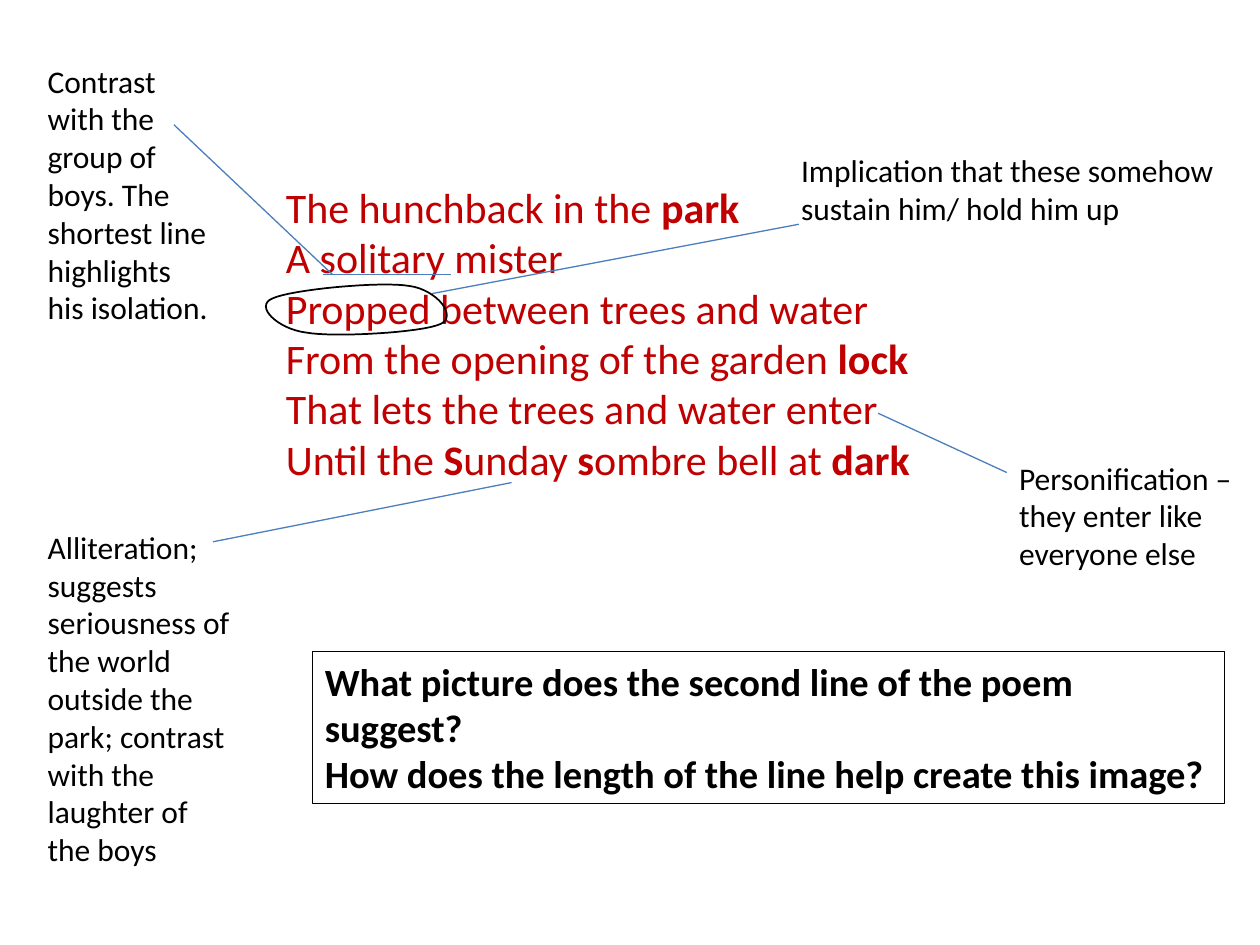
from dataclasses import dataclass

from lxml import etree
from pptx import Presentation
from pptx.dml.color import RGBColor
from pptx.enum.shapes import MSO_CONNECTOR
from pptx.enum.text import MSO_ANCHOR, MSO_AUTO_SIZE
from pptx.oxml.ns import qn
from pptx.util import Inches, Pt

STRAIGHT = MSO_CONNECTOR.STRAIGHT
TOP = MSO_ANCHOR.TOP
GROW = MSO_AUTO_SIZE.SHAPE_TO_FIT_TEXT
BLANK_LAYOUT = 6
CURVE_STEPS = 16


@dataclass(frozen=True)
class Theme:
    font: str = "Calibri"
    poem: RGBColor = RGBColor(0xC0, 0x00, 0x00)
    ink: RGBColor = RGBColor(0x00, 0x00, 0x00)
    pointer: RGBColor = RGBColor(0x4B, 0x7E, 0xBC)
    poem_size: Pt = Pt(24)
    note_size: Pt = Pt(18)
    question_size: Pt = Pt(22)
    thin: Pt = Pt(0.75)
    ring: Pt = Pt(1)


THEME = Theme()

POEM_BOX = (2.17, 1.39, 5.51, 2.83)
POEM = [
    [("The hunchback in the ", False), ("park", True)],
    [("A solitary mister", False)],
    [("Propped between trees and water", False)],
    [("From the opening of the garden ", False), ("lock", True)],
    [("That lets the trees and water enter", False)],
    [("Until the ", False), ("S", True), ("unday ", False), ("s", True),
     ("ombre bell at ", False), ("dark", True)],
]

NOTES = [
    ((0.28, 0.44, 1.5, 2.22),
     "Contrast with the group of boys. The shortest line highlights his isolation."),
    ((0.28, 4.14, 1.66, 2.83),
     "Alliteration; suggests seriousness of the world outside the park; "
     "contrast with the laughter of the boys"),
    ((7.99, 3.59, 1.9, 1.01), "Personification – they enter like everyone else"),
    ((6.26, 1.15, 3.54, 0.71), "Implication that these somehow sustain him/ hold him up"),
]

POINTERS = [
    ((2.56, 2.18), (3.58, 2.18)),
    ((2.64, 2.18), (1.38, 0.99)),
    ((4.06, 3.83), (1.69, 4.3)),
    ((6.97, 3.28), (7.99, 3.75)),
    ((3.43, 2.33), (6.34, 1.78)),
]

RING_BOX = (2.11, 2.25)
RING_START = (1.39, 0.32)
RING_CURVES = [
    ((1.52, 0.26), (1.36, 0.05), (1.14, 0.02)),
    ((0.91, -0.02), (0.19, 0.05), (0.05, 0.12)),
    ((-0.09, 0.18), (0.09, 0.36), (0.32, 0.39)),
    ((0.54, 0.43), (1.25, 0.39), (1.39, 0.32)),
]

QUESTION_BOX = (2.48, 5.17, 7.24, 1.21)
QUESTIONS = [
    [("What picture does the second line of the poem suggest?", True)],
    [("How does the length of the line help create this image?", True)],
]


def add_text(slide, box, paragraphs, size, color):
    shape = slide.shapes.add_textbox(*map(Inches, box))
    frame = shape.text_frame
    frame_format = {"word_wrap": True, "auto_size": GROW, "vertical_anchor": TOP}
    for name, value in frame_format.items():
        setattr(frame, name, value)
    for index, runs in enumerate(paragraphs):
        paragraph = frame.add_paragraph() if index else frame.paragraphs[0]
        for text, bold in runs:
            run = paragraph.add_run()
            run.text = text
            font_format = {"name": THEME.font, "size": size, "bold": bold}
            for name, value in font_format.items():
                setattr(run.font, name, value)
            run.font.color.rgb = color
    return shape


def set_line(shape, color, width):
    shape.line.color.rgb = color
    shape.line.width = width


def add_pointer(slide, start, end):
    connector = slide.shapes.add_connector(STRAIGHT, *map(Inches, start + end))
    set_line(connector, THEME.pointer, THEME.thin)
    etree.SubElement(connector.element.spPr, qn("a:effectLst"))


def curve_points(start, curves):
    points = []
    for first, second, end in curves:
        for step in range(1, CURVE_STEPS + 1):
            t = step / CURVE_STEPS
            u = 1 - t
            points.append(tuple(
                u**3 * a + 3 * u**2 * t * b + 3 * u * t**2 * c + t**3 * d
                for a, b, c, d in zip(start, first, second, end)))
        start = end
    return points


def add_word_ring(slide, box):
    left, top = box
    points = [(Inches(left + x), Inches(top + y))
              for x, y in [RING_START] + curve_points(RING_START, RING_CURVES)]
    builder = slide.shapes.build_freeform(*points[0])
    builder.add_line_segments(points[1:], close=True)
    ring = builder.convert_to_shape()
    ring.shadow.inherit = False
    ring.fill.background()
    set_line(ring, THEME.ink, THEME.ring)


def add_question_panel(slide, box):
    panel = add_text(slide, box, QUESTIONS, THEME.question_size, THEME.ink)
    set_line(panel, THEME.ink, THEME.thin)


def build_annotated_poem(presentation):
    slide = presentation.slides.add_slide(presentation.slide_layouts[BLANK_LAYOUT])
    add_text(slide, POEM_BOX, POEM, THEME.poem_size, THEME.poem)
    for start, end in POINTERS:
        add_pointer(slide, start, end)
    for box, note in NOTES:
        add_text(slide, box, [[(note, False)]], THEME.note_size, THEME.ink)
    add_word_ring(slide, RING_BOX)
    add_question_panel(slide, QUESTION_BOX)


def main():
    presentation = Presentation()
    presentation.slide_width = Inches(10)
    presentation.slide_height = Inches(7.5)
    build_annotated_poem(presentation)
    presentation.save("out.pptx")


if __name__ == "__main__":
    main()
